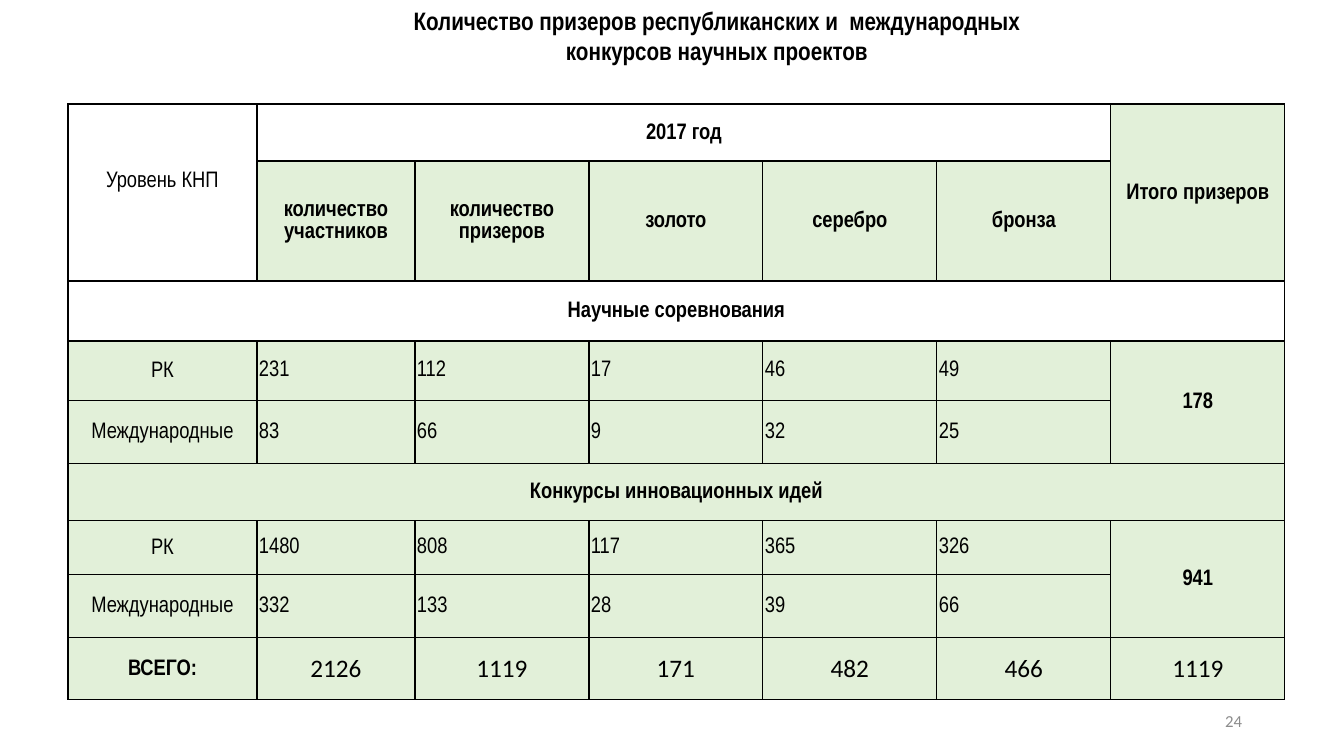
from lxml import etree
from pptx import Presentation
from pptx import util as u
from pptx.dml.color import RGBColor
from pptx.enum import text
from pptx.oxml import ns

PX = 914400 / 100.8
BLACK = RGBColor(0x00, 0x00, 0x00)
GREY = RGBColor(0x8C, 0x8C, 0x8C)
GREEN = RGBColor(0xE2, 0xF0, 0xD9)
NARROW = "Arial Narrow"
LEFT, CENTER, RIGHT = text.PP_ALIGN.LEFT, text.PP_ALIGN.CENTER, text.PP_ALIGN.RIGHT


def px(n):
    return u.Emu(round(n * PX))


def write(tf, words, size, font=NARROW, color=BLACK, bold=False, align=CENTER):
    tf.word_wrap = True
    p = tf.paragraphs[0]
    p.alignment = align
    r = p.add_run()
    r.text = words
    r.font.size = u.Pt(size)
    r.font.name = font
    r.font.bold = bold
    r.font.color.rgb = color
    return p


prs = Presentation()
prs.slide_width, prs.slide_height = px(1344), px(756)
s = prs.slides.add_slide(prs.slide_layouts[6])

col_widths = [189, 158] + [174] * 5
row_heights = [57, 120, 60, 60, 63, 57, 54, 63, 62]
rows = [
    ["Уровень КНП", "2017 год", "", "", "", "", "Итого призеров"],
    ["", "количество участников", "количество призеров", "золото", "серебро", "бронза", ""],
    ["Научные соревнования", "", "", "", "", "", ""],
    ["РК", "231", "112", "17", "46", "49", "178"],
    ["Международные", "83", "66", "9", "32", "25", ""],
    ["Конкурсы инновационных идей", "", "", "", "", "", ""],
    ["РК", "1480", "808", "117", "365", "326", "941"],
    ["Международные", "332", "133", "28", "39", "66", ""],
    ["ВСЕГО:", "2126", "1119", "171", "482", "466", "1119"],
]
merges = [(0, 0, 1, 0), (0, 1, 0, 5), (0, 6, 1, 6), (2, 0, 2, 6),
          (3, 6, 4, 6), (5, 0, 5, 6), (6, 6, 7, 6)]
white_cells = {(0, 0), (0, 1), (2, 0)}
data_rows = (3, 4, 6, 7)
total_row = 8

table = s.shapes.add_table(len(rows), len(col_widths), px(68), px(104),
                           px(sum(col_widths)), px(sum(row_heights))).table
table.first_row = table.horz_banding = False
for column, width in zip(table.columns, col_widths):
    column.width = px(width)
for row, height in zip(table.rows, row_heights):
    row.height = px(height)
for top, left, bottom, right in merges:
    table.cell(top, left).merge(table.cell(bottom, right))

for i, row in enumerate(rows):
    for j, words in enumerate(row):
        cell = table.cell(i, j)
        cell.margin_left = cell.margin_right = px(2)
        cell.margin_top = cell.margin_bottom = 0
        cell.vertical_anchor = text.MSO_ANCHOR.MIDDLE
        tcPr = cell._tc.get_or_add_tcPr()
        for side in ("lnL", "lnR", "lnT", "lnB"):
            ln = etree.SubElement(tcPr, ns.qn(f"a:{side}"), w=str(u.Pt(1)))
            fill = etree.SubElement(ln, ns.qn("a:solidFill"))
            etree.SubElement(fill, ns.qn("a:srgbClr"), val=str(BLACK))
        if (i, j) in white_cells:
            cell.fill.background()
        else:
            cell.fill.solid()
            cell.fill.fore_color.rgb = GREEN
        if not words:
            continue
        is_value = i in data_rows and 0 < j < 6
        is_total = i == total_row and j > 0
        is_label = j == 0 and (i == 0 or i in data_rows)
        p = write(cell.text_frame, words, 18 if is_total else 16,
                  font="Calibri" if is_total else NARROW,
                  bold=not (is_value or is_total or is_label),
                  align=LEFT if is_value else CENTER)
        if j == 0 or i < 2:
            p.line_spacing = 1.07
table.cell(0, 0).margin_bottom = px(23)

title = s.shapes.add_textbox(px(381), 0, px(672), px(72))
write(title.text_frame, "Количество призеров республиканских и  международных конкурсов научных проектов",
      18, bold=True)

number = s.shapes.add_textbox(px(950), px(701), px(302), px(40))
number.text_frame.vertical_anchor = text.MSO_ANCHOR.MIDDLE
write(number.text_frame, "24", 12, font="Calibri", color=GREY, align=RIGHT)

prs.save("out.pptx")
